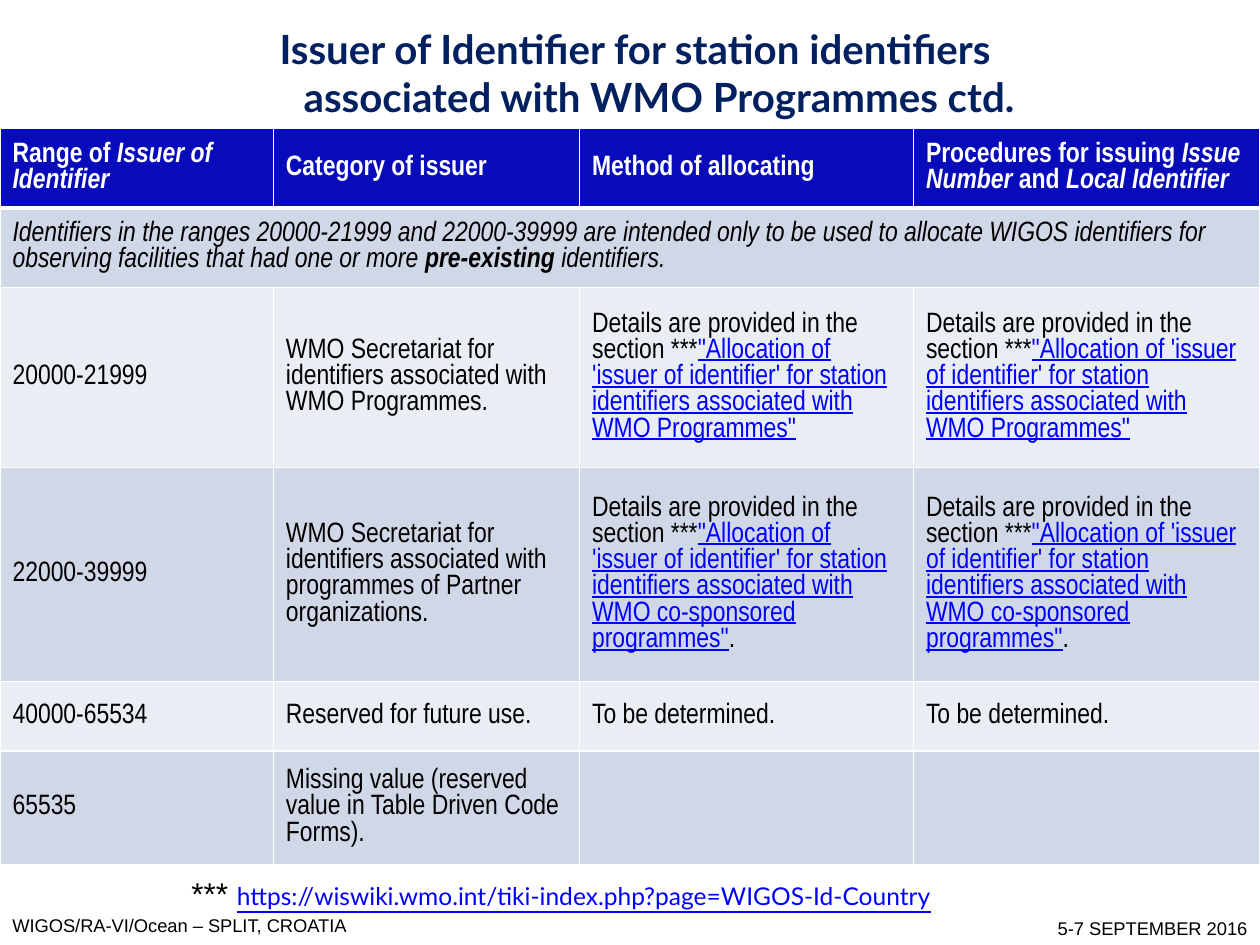
from lxml.etree import SubElement
from pptx import Presentation
from pptx.dml.color import RGBColor
from pptx.enum.text import MSO_ANCHOR as Anchor, PP_ALIGN as Align
from pptx.oxml.ns import qn
from pptx.util import Inches, Pt

WHITE = RGBColor(0xFF, 0xFF, 0xFF)
BLACK = RGBColor(0, 0, 0)
NAVY = RGBColor(0x00, 0x20, 0x60)
HEADER_BLUE = RGBColor(0x07, 0x0B, 0xB9)
BANDS = [RGBColor(0xD0, 0xD8, 0xE8), RGBColor(0xE9, 0xED, 0xF4)]
LINK_BLUE = RGBColor(0, 0, 0xFF)

COLUMN_WIDTHS = [2.17, 2.43, 2.65, 2.75]
ROW_HEIGHTS = [0.63, 0.63, 1.43, 1.7, 0.55, 0.9]


def add_runs(paragraph, runs):
    """Each run is a (text, style) pair; style holds any of b, i and u (link look)."""
    for text, style in runs:
        run = paragraph.add_run()
        run.text = text
        if "b" in style:
            run.font.bold = True
        if "i" in style:
            run.font.italic = True
        if "u" in style:
            run.font.underline = True
            run.font.color.rgb = LINK_BLUE


def add_borders(cell, bottom_width):
    properties = cell._tc.get_or_add_tcPr()
    for side, width in zip("LRTB", [1, 1, 1, bottom_width]):
        line = SubElement(properties, qn(f"a:ln{side}"), w=str(Pt(width)))
        fill = SubElement(line, qn("a:solidFill"))
        SubElement(fill, qn("a:srgbClr"), val=str(WHITE))


presentation = Presentation()
presentation.slide_width = Inches(10)
presentation.slide_height = Inches(7.5)
slide = presentation.slides.add_slide(presentation.slide_layouts[5])

# Title
title = slide.shapes.title
title.left, title.top = Inches(1.57), 0
title.width, title.height = Inches(6.95), Inches(1.15)
title.text_frame.vertical_anchor = Anchor.MIDDLE
title.text_frame.word_wrap = True
title.text_frame.text = "Issuer of Identifier for station identifiers associated with WMO Programmes ctd."
paragraph = title.text_frame.paragraphs[0]
paragraph.alignment = Align.CENTER
properties = paragraph._p.get_or_add_pPr()
properties.set("marL", str(Inches(0.38)))
properties.set("indent", str(-Inches(0.38)))
paragraph.font.name = "Lato"
paragraph.font.size = Pt(23)
paragraph.font.bold = True
paragraph.font.color.rgb = NAVY

# Table of identifier ranges
details = ("Details are provided in the section ***", "")
allocation = "\"Allocation of 'issuer of identifier' for station identifiers associated with WMO "
programmes = [details, (allocation + 'Programmes"', "u")]
partners = [details, (allocation + 'co-sponsored programmes"', "u"), (".", "")]
to_be_determined = [("To be determined.", "")]
rows = [
    [
        [("Range of ", ""), ("Issuer of Identifier", "i")],
        [("Category of issuer", "")],
        [("Method of allocating", "")],
        [("Procedures for issuing ", ""), ("Issue Number", "i"),
         (" and ", ""), ("Local Identifier", "i")],
    ],
    [
        [("Identifiers in the ranges 20000-21999 and 22000-39999 are intended only to be used "
          "to allocate WIGOS identifiers for observing facilities that had one or more ", "i"),
         ("pre-existing", "bi"), (" identifiers.", "i")],
        [], [], [],
    ],
    [
        [("20000-21999", "")],
        [("WMO Secretariat for identifiers associated with WMO Programmes.", "")],
        programmes, programmes,
    ],
    [
        [("22000-39999", "")],
        [("WMO Secretariat for identifiers associated with programmes of "
          "Partner organizations.", "")],
        partners, partners,
    ],
    [
        [("40000-65534", "")],
        [("Reserved for future use.", "")],
        to_be_determined, to_be_determined,
    ],
    [
        [("65535", "")],
        [("Missing value (reserved value in Table Driven Code Forms).", "")],
        [], [],
    ],
]
table = slide.shapes.add_table(
    len(ROW_HEIGHTS), len(COLUMN_WIDTHS), 0, Inches(1.02),
    Inches(sum(COLUMN_WIDTHS)), Inches(sum(ROW_HEIGHTS))).table
table.first_row = False
table.horz_banding = False
for column, width in zip(table.columns, COLUMN_WIDTHS):
    column.width = Inches(width)
for row, height in zip(table.rows, ROW_HEIGHTS):
    row.height = Inches(height)
table.cell(1, 0).merge(table.cell(1, 3))

for row_index, row in enumerate(rows):
    is_header = row_index == 0
    for column_index, runs in enumerate(row):
        cell = table.cell(row_index, column_index)
        add_borders(cell, 3 if is_header else 1)
        cell.fill.solid()
        cell.fill.fore_color.rgb = HEADER_BLUE if is_header else BANDS[(row_index - 1) % 2]
        cell.vertical_anchor = Anchor.MIDDLE
        paragraph = cell.text_frame.paragraphs[0]
        paragraph.font.name = "Arial Narrow"
        paragraph.font.size = Pt(16)
        paragraph.font.bold = is_header
        paragraph.font.color.rgb = WHITE if is_header else BLACK
        add_runs(paragraph, runs)

# Source note and footers
note_runs = [("*** ", ""),
             ("https://wiswiki.wmo.int/tiki-index.php?page=WIGOS-Id-Country", "u")]
texts = [
    (1.42, 6.89, 8.14, 0.4, 18, Align.LEFT, note_runs),
    (0, 7.21, 3.55, 0.29, 10.5, Align.LEFT, [("WIGOS/RA-VI/Ocean – SPLIT, CROATIA", "")]),
    (7.74, 7.23, 2.26, 0.27, 10.5, Align.RIGHT, [("5-7 SEPTEMBER 2016", "")]),
]
for left, top, width, height, size, alignment, runs in texts:
    box = slide.shapes.add_textbox(Inches(left), Inches(top), Inches(width), Inches(height))
    box.text_frame.word_wrap = True
    paragraph = box.text_frame.paragraphs[0]
    paragraph.alignment = alignment
    paragraph.font.name = "Arial"
    paragraph.font.size = Pt(size)
    paragraph.font.color.rgb = BLACK
    add_runs(paragraph, runs)
    for run in paragraph.runs:
        if run.font.underline:
            run.font.name = "Lato"
            run.font.size = Pt(14)

presentation.save("out.pptx")
